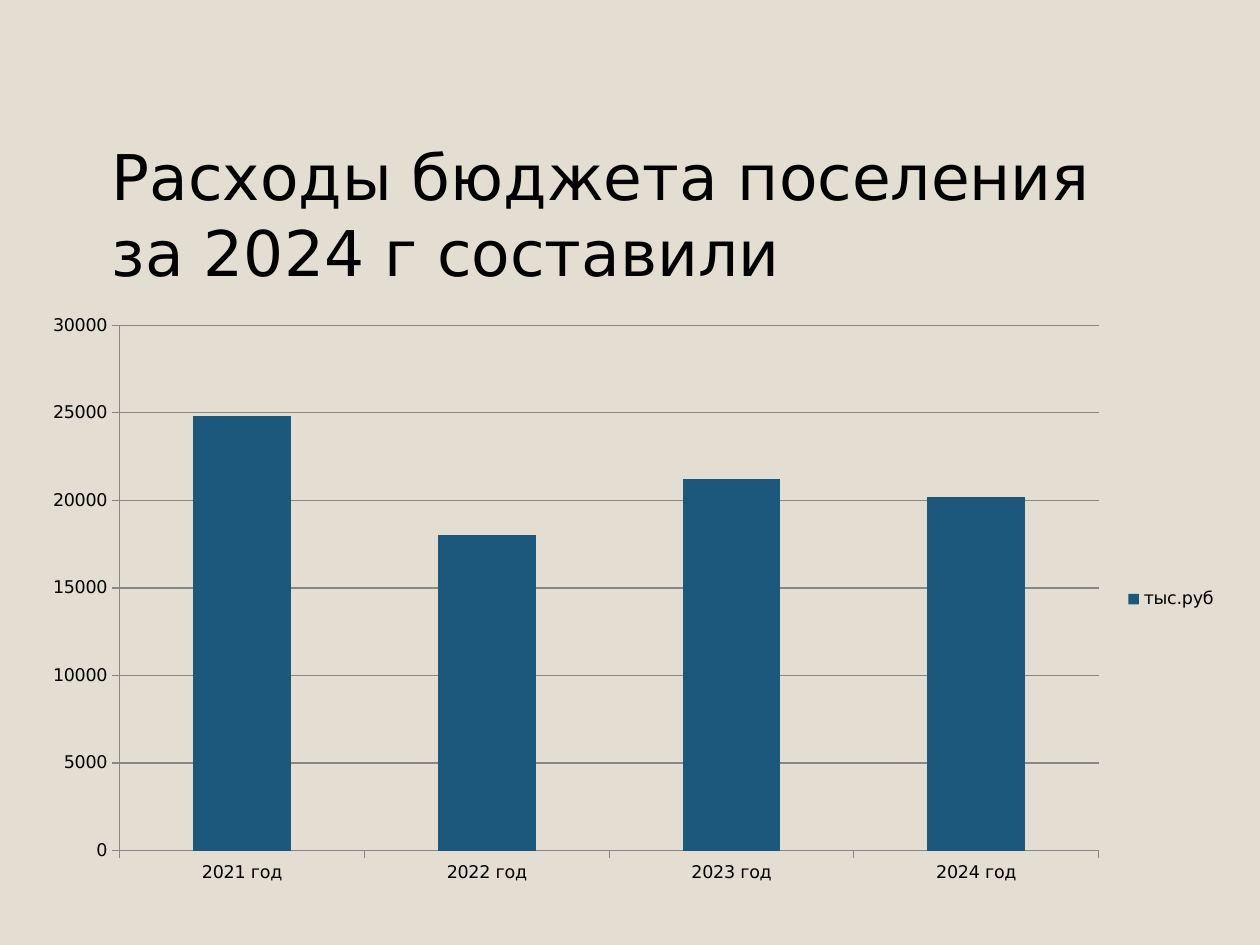
import pptx
import pptx.chart.data
import pptx.dml.color
import pptx.enum.chart
import pptx.enum.text
import pptx.util

Pt = pptx.util.Pt
RGBColor = pptx.dml.color.RGBColor
chart_enums = pptx.enum.chart

FONT = "DejaVu Sans"
COLORS = {"background": "E3DED1", "text": "000000", "bar": "1B587C", "line": "878787"}


def set_font(font, size):
    for name, value in {"name": FONT, "size": Pt(size)}.items():
        setattr(font, name, value)
    font.color.rgb = RGBColor.from_string(COLORS["text"])


presentation = pptx.Presentation()
presentation.slide_width, presentation.slide_height = Pt(720), Pt(540)
slide = presentation.slides.add_slide(presentation.slide_layouts[6])

# Background
slide.background.fill.solid()
slide.background.fill.fore_color.rgb = RGBColor.from_string(COLORS["background"])

# Title
title = slide.shapes.add_textbox(Pt(56.88), Pt(78.48), Pt(612), Pt(83.52))
frame_format = {
    "word_wrap": True,
    "auto_size": pptx.enum.text.MSO_AUTO_SIZE.NONE,
    "vertical_anchor": pptx.enum.text.MSO_ANCHOR.MIDDLE,
    "margin_left": Pt(7.2),
    "margin_top": Pt(3.6),
    "margin_right": Pt(7.2),
    "margin_bottom": 0,
}
for name, value in frame_format.items():
    setattr(title.text_frame, name, value)
run = title.text_frame.paragraphs[0].add_run()
run.text = "Расходы бюджета поселения за 2024 г составили"
set_font(run.font, 36)

# Expenditure chart
expenditure = pptx.chart.data.CategoryChartData()
expenditure.categories = [f"{year} год" for year in range(2021, 2025)]
expenditure.add_series("тыс.руб", (24800, 18000, 21200, 20200))
chart = slide.shapes.add_chart(
    chart_enums.XL_CHART_TYPE.COLUMN_STACKED,
    Pt(16.56), Pt(173.52), Pt(686.16), Pt(337.68), expenditure,
).chart
set_font(chart.font, 10)
chart.has_title = False

# Bars
plot = chart.plots[0]
for name, value in {"gap_width": 150, "overlap": 100, "vary_by_categories": False}.items():
    setattr(plot, name, value)
bar_fill = plot.series[0].format.fill
bar_fill.solid()
bar_fill.fore_color.rgb = RGBColor.from_string(COLORS["bar"])

# Axes and gridlines
value_format = {
    "minimum_scale": 0,
    "maximum_scale": 30000,
    "major_unit": 5000,
    "has_major_gridlines": True,
}
for name, value in value_format.items():
    setattr(chart.value_axis, name, value)
for axis in (chart.category_axis, chart.value_axis):
    axis.major_tick_mark = chart_enums.XL_TICK_MARK.OUTSIDE
    axis.minor_tick_mark = chart_enums.XL_TICK_MARK.NONE
for part in (chart.category_axis, chart.value_axis, chart.value_axis.major_gridlines):
    part.format.line.width = Pt(0.75)
    part.format.line.color.rgb = RGBColor.from_string(COLORS["line"])

# Legend
chart.has_legend = True
chart.legend.position = chart_enums.XL_LEGEND_POSITION.RIGHT
chart.legend.include_in_layout = False

presentation.save("out.pptx")
